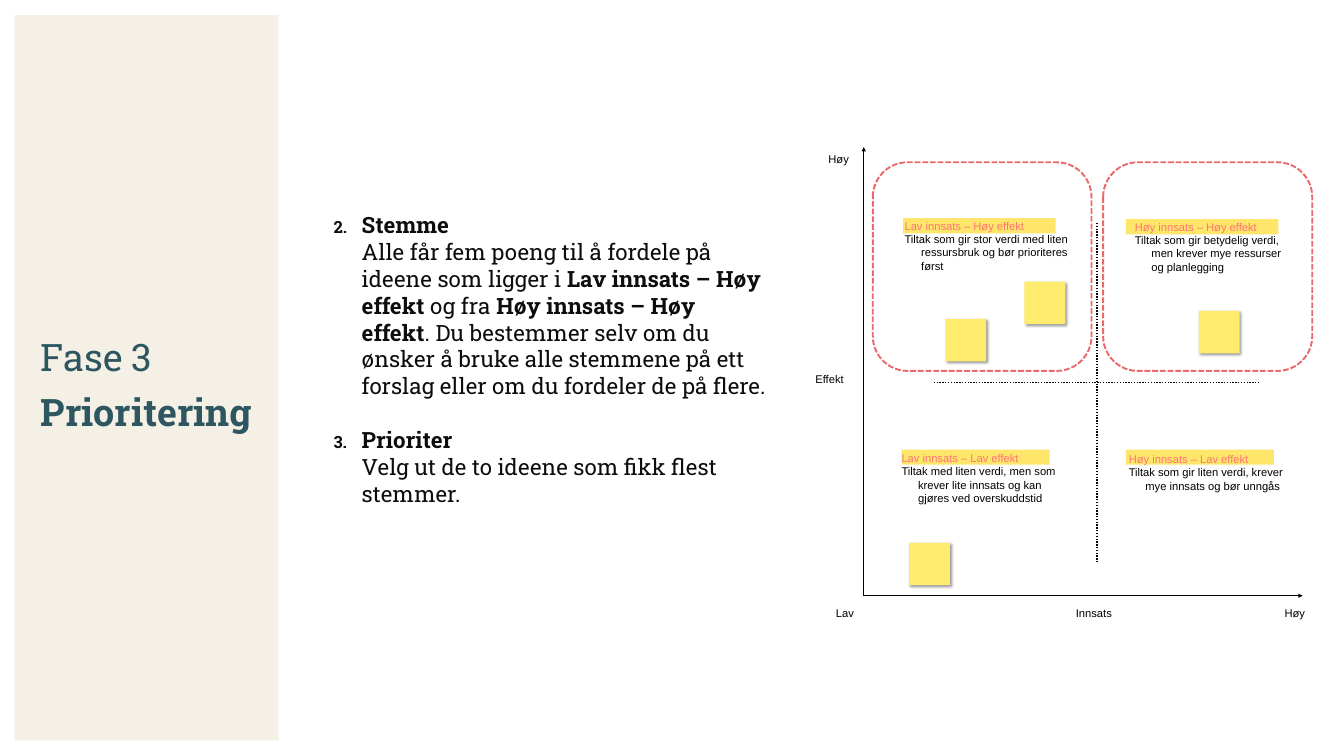
from dataclasses import dataclass

from lxml.etree import SubElement
from pptx import Presentation
from pptx.dml.color import RGBColor
from pptx.enum.dml import MSO_LINE
from pptx.enum.shapes import MSO_CONNECTOR, MSO_SHAPE
from pptx.enum.text import MSO_ANCHOR, PP_ALIGN
from pptx.oxml import parse_xml
from pptx.oxml.ns import nsdecls, qn
from pptx.util import Pt

PX = 9144  # EMU in one px, 100 px to the inch


@dataclass(frozen=True)
class Theme:
    heading_font: str = "Roboto Slab"
    label_font: str = "Arial"
    panel: str = "F5F0E6"
    title: str = "2D5660"
    body: str = "0D0D0D"
    black: str = "000000"
    marker: str = "FEE66A"
    note: str = "FFEB6D"
    accent: str = "FF7575"
    frame: str = "EB696B"
    title_size: int = 54
    body_size: int = 32
    label_size: int = 16


THEME = Theme()

STEPS = [
    [("Stemme", True),
     ("\vAlle får fem poeng til å fordele på ideene som ligger i ", False),
     ("Lav innsats – Høy effekt", True), (" og fra ", False),
     ("Høy innsats – Høy effekt", True),
     (". Du bestemmer selv om du ønsker å bruke alle stemmene på ett forslag "
      "eller om du fordeler de på flere.", False)],
    [("Prioriter", True),
     ("\vVelg ut de to ideene som fikk flest stemmer.", False)],
]

# Marker box, text box, heading, description
QUADRANTS = [
    ((180, 141, 303, 30), (177, 136, 361, 119), "Lav innsats – Høy effekt",
     "Tiltak som gir stor verdi med liten ressursbruk og bør prioriteres først"),
    ((622, 143, 303, 30), (634, 138, 330, 119), "Høy innsats – Høy effekt",
     "Tiltak som gir betydelig verdi, men krever mye ressurser og planlegging"),
    ((177, 600, 294, 30), (171, 597, 353, 119), "Lav innsats – Lav effekt",
     "Tiltak med liten verdi, men som krever lite innsats og kan gjøres ved "
     "overskuddstid"),
    ((622, 600, 294, 30), (622, 599, 354, 92), "Høy innsats – Lav effekt",
     "Tiltak som gir liten verdi, krever mye innsats og bør unngås"),
]
AXIS_LABELS = [("Høy", 931, 906, 54), ("Innsats", 517, 906, 84),
               ("Lav", 41, 906, 50), ("Høy", 26, 4, 54), ("Effekt", 0, 441, 69)]
NOTES = [(421, 267), (264, 341), (192, 785), (767, 325)]
FRAMES = [(120, 30, 434, 414), (577, 30, 415, 414)]


def emu(*lengths):
    return [n * PX for n in lengths]


def add_run(p, text, font, size, color, bold=False):
    r = p.add_run()
    r.text = text
    for name, value in dict(name=font, size=Pt(size), bold=bold).items():
        setattr(r.font, name, value)
    r.font.color.rgb = RGBColor.from_string(color)


def set_indent(p, indent):
    pPr = p._p.get_or_add_pPr()
    pPr.set("marL", str(indent * PX))
    pPr.set("indent", str(-indent * PX))
    return pPr


def add_box(s, box, fill=None, line=None, kind=MSO_SHAPE.RECTANGLE):
    sp = s.shapes.add_shape(kind, *emu(*box))
    sp.shadow.inherit = False
    if fill:
        sp.fill.solid()
        sp.fill.fore_color.rgb = RGBColor.from_string(fill)
    else:
        sp.fill.background()
    if line:
        sp.line.color.rgb = RGBColor.from_string(line)
        sp.line.width = Pt(2.75)
        sp.line.dash_style = MSO_LINE.SQUARE_DOT
    else:
        sp.line.fill.background()
    return sp


def add_line(s, start, end, arrow=False):
    """Draw a solid axis with an arrowhead, or a dotted divider."""
    line = s.shapes.add_connector(MSO_CONNECTOR.STRAIGHT, *emu(*start, *end))
    line.line.color.rgb = RGBColor.from_string(THEME.black)
    line.line.width = Pt(2)
    if arrow:
        SubElement(line.line._get_or_add_ln(), qn("a:tailEnd"), type="triangle")
    else:
        line.line.dash_style = MSO_LINE.ROUND_DOT
    SubElement(line.element.spPr, qn("a:effectLst"))


def add_label(s, box, lines, wrap=True):
    """Write one paragraph for each (text, colour) pair, hanging if it wraps."""
    tf = s.shapes.add_textbox(*emu(*box)).text_frame
    margins = {f"margin_{side}": 6 * PX
               for side in ("left", "top", "right", "bottom")}
    for name, value in dict(margins, word_wrap=wrap,
                            vertical_anchor=MSO_ANCHOR.MIDDLE).items():
        setattr(tf, name, value)
    for i, (text, color) in enumerate(lines):
        p = tf.add_paragraph() if i else tf.paragraphs[0]
        if wrap:
            set_indent(p, 33)
        add_run(p, text, THEME.label_font, THEME.label_size, color)


def add_note(s, x, y):
    sp = add_box(s, (x, y, 81, 84), THEME.note)
    sp.element.spPr.remove(sp.element.spPr.find(qn("a:effectLst")))
    sp.element.spPr.append(parse_xml(
        f'<a:effectLst {nsdecls("a")}><a:outerShdw blurRad="{Pt(4)}" '
        f'dist="{Pt(3)}" dir="2700000" algn="tl" rotWithShape="0">'
        f'<a:srgbClr val="{THEME.black}"><a:alpha val="40000"/></a:srgbClr>'
        '</a:outerShdw></a:effectLst>'))


def add_sidebar(s, x, y, w, h):
    panel = add_box(s, (x, y, w, h), THEME.panel)
    title = s.shapes.title
    title.element.addprevious(panel.element)
    place = zip(("left", "top", "width", "height"),
                emu(x + 42, y + 157, w - 20, h - 308))
    for name, value in place:
        setattr(title, name, value)
    tf = title.text_frame
    tf.word_wrap = True
    tf.vertical_anchor = MSO_ANCHOR.MIDDLE
    for i, text in enumerate(("Fase 3", "Prioritering")):
        p = tf.add_paragraph() if i else tf.paragraphs[0]
        p.alignment = PP_ALIGN.LEFT
        p.line_spacing = 1.2
        add_run(p, text, THEME.heading_font, THEME.title_size, THEME.title,
                bold=i == 1)


def add_steps(s, x, y, w, h):
    tf = s.shapes.add_textbox(*emu(x, y, w, h)).text_frame
    tf.word_wrap = True
    tf.vertical_anchor = MSO_ANCHOR.MIDDLE
    for i, runs in enumerate(STEPS):
        p = tf.add_paragraph() if i else tf.paragraphs[0]
        if i:
            p.space_before = Pt(38)
        pPr = set_indent(p, 56)
        SubElement(pPr, qn("a:buSzPct"), val="75000")
        SubElement(pPr, qn("a:buFont"), typeface=THEME.label_font)
        SubElement(pPr, qn("a:buAutoNum"), type="arabicPeriod", startAt="2")
        for text, bold in runs:
            if text.startswith("\v"):
                p.add_line_break()
            add_run(p, text.lstrip("\v"), THEME.heading_font, THEME.body_size,
                    THEME.body, bold)


def add_matrix(s, x, y, w, h):
    """Effort and effect matrix, with its axes inside the given box."""
    def at(box):
        return (x + box[0], y + box[1], *box[2:])

    origin = at((102, 890))
    add_line(s, origin, (origin[0], y), arrow=True)
    add_line(s, origin, (x + w - 19, origin[1]), arrow=True)
    add_line(s, at((565, 824)), at((565, 148)))
    add_line(s, at((241, 467)), at((888, 467)))
    for text, left, top, width in AXIS_LABELS:
        add_label(s, at((left, top, width, h - 906)), [(text, THEME.black)],
                  wrap=False)
    for marker, box, heading, text in QUADRANTS:
        add_box(s, at(marker), THEME.marker)
        add_label(s, at(box), [(heading, THEME.accent), (text, THEME.black)])
    for note in NOTES:
        add_note(s, *at(note))
    for frame in FRAMES:
        add_box(s, at(frame), line=THEME.frame,
                kind=MSO_SHAPE.ROUNDED_RECTANGLE)


def main():
    prs = Presentation()
    prs.slide_width, prs.slide_height = emu(2667, 1500)
    s = prs.slides.add_slide(prs.slide_layouts[5])
    add_sidebar(s, 29, 30, 524, 1439)
    add_steps(s, 652, 254, 884, 916)
    add_matrix(s, 1612, 292, 992, 944)
    prs.save("out.pptx")


if __name__ == "__main__":
    main()
